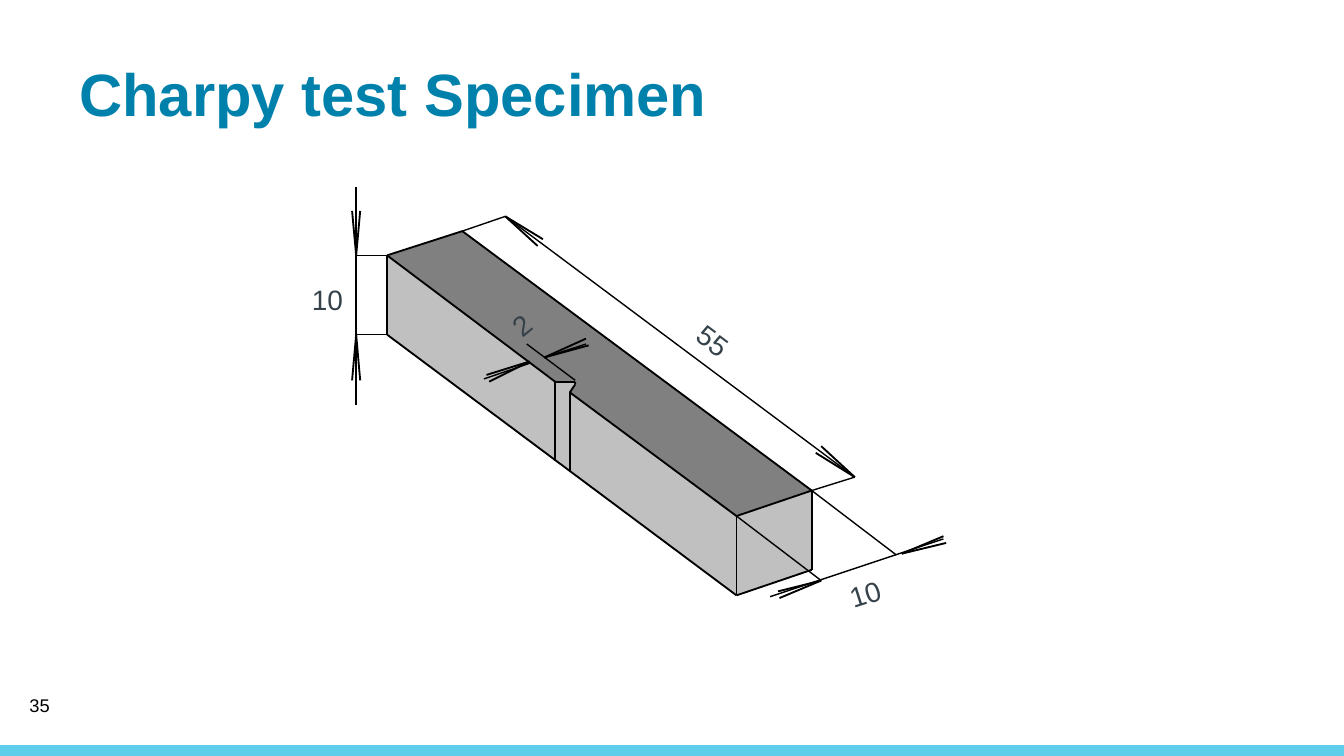
from pptx import Presentation
from pptx.dml.color import RGBColor
from pptx.enum.shapes import MSO_CONNECTOR, MSO_SHAPE
from pptx.enum.text import MSO_ANCHOR, PP_ALIGN
from pptx.oxml.ns import qn
from pptx.util import Inches, Pt
from lxml import etree

STRAIGHT = MSO_CONNECTOR.STRAIGHT
RECTANGLE = MSO_SHAPE.RECTANGLE
TOP, MIDDLE = MSO_ANCHOR.TOP, MSO_ANCHOR.MIDDLE
LEFT = PP_ALIGN.LEFT

BLACK = RGBColor(0x00, 0x00, 0x00)
TITLE_BLUE = RGBColor(0x00, 0x81, 0xAB)
BAR_BLUE = RGBColor(0x5F, 0xCE, 0xEA)
LABEL_GREY = RGBColor(0x36, 0x42, 0x4A)
TOP_GREY = RGBColor(0x80, 0x80, 0x80)
SIDE_GREY = RGBColor(0xC0, 0xC0, 0xC0)

# A 16:9 slide
deck = Presentation()
deck.slide_width = Inches(10)
deck.slide_height = deck.slide_width * 9 // 16
slide = deck.slides.add_slide(deck.slide_layouts[5])
shapes = slide.shapes


def add_line(start, end, width):
    ends = [Inches(value) for value in (*start, *end)]
    line = shapes.add_connector(STRAIGHT, *ends)
    line.line.color.rgb = BLACK
    line.line.width = Pt(width)
    etree.SubElement(line._element.spPr, qn("a:effectLst"))


def write_text(box, text, anchor, insets, font_values, color):
    frame = box.text_frame
    frame.vertical_anchor = anchor
    sides = ("margin_left", "margin_top", "margin_right", "margin_bottom")
    for side, inset in zip(sides, insets):
        setattr(frame, side, Inches(inset))
    para = frame.paragraphs[0]
    para.alignment = LEFT
    span = para.add_run()
    span.text = text
    span.font.color.rgb = color
    for name, value in font_values.items():
        setattr(span.font, name, value)


# Bottom bar
bar_height = Inches(0.08)
bar = shapes.add_shape(RECTANGLE, 0, deck.slide_height - bar_height,
                       deck.slide_width, bar_height)
bar.shadow.inherit = False
bar.fill.solid()
bar.fill.fore_color.rgb = BAR_BLUE
bar.line.fill.background()

# Title
title = shapes.title
title.left, title.top = Inches(0.59), Inches(0.37)
title.width, title.height = Inches(8.99), Inches(0.57)
title_font = {"name": "Arial", "size": Pt(32), "bold": True}
write_text(title, "Charpy test Specimen", TOP, (0, 0.05, 0.1, 0.05), title_font,
           TITLE_BLUE)

# Corners of the bar specimen
back_left, back_right = (2.88, 1.9), (3.44, 1.72)
front_left, front_right = (5.48, 3.84), (6.04, 3.65)
back_base, front_base, right_base = (2.88, 2.49), (5.48, 4.43), (6.04, 4.24)
notch_back, notch_front = (4.13, 2.84), (4.24, 2.92)
notch_back_base, notch_front_base = (4.13, 3.43), (4.24, 3.51)
notch_root = [(4.28, 2.86), (4.28, 2.85), (4.27, 2.84)]

# Filled faces, then the rounded notch root as an open curve
outlines = [
    ([notch_back, back_left, back_right, front_right, front_left, notch_front,
      *notch_root], TOP_GREY),
    ([front_base, front_left, front_right, right_base], SIDE_GREY),
    ([front_left, notch_front, notch_front_base, front_base], SIDE_GREY),
    ([notch_back_base, back_base, back_left, notch_back], SIDE_GREY),
    ([notch_back, notch_back_base, notch_front_base, notch_front, *notch_root],
     SIDE_GREY),
    (notch_root, None),
]
for points, fill in outlines:
    corners = [(Inches(x), Inches(y)) for x, y in points]
    builder = shapes.build_freeform(*corners[0])
    builder.add_line_segments(corners[1:], close=fill is not None)
    face = builder.convert_to_shape()
    face.shadow.inherit = False
    if fill is None:
        face.fill.background()
        face.line.color.rgb = BLACK
        face.line.width = Pt(1)
    else:
        face.fill.solid()
        face.fill.fore_color.rgb = fill
        face.line.fill.background()

# Specimen edges
edges = [
    (back_left, back_right), (back_right, front_right), (front_right, front_left),
    (front_left, notch_front), (notch_back, back_left), (back_left, back_base),
    (back_base, front_base), (front_base, front_left), (front_base, right_base),
    (right_base, front_right), (notch_root[-1], notch_back),
    (notch_root[0], notch_front), (notch_front, notch_front_base),
    (notch_back, notch_back_base),
]
for start, end in edges:
    add_line(start, end, 1)

# Dimension and extension lines
length_start, length_end = (3.76, 1.61), (6.36, 3.55)
height_top, height_base = (2.65, 1.9), (2.65, 2.49)
width_left, width_right = (6.11, 4.32), (6.71, 4.12)
notch_left, notch_right = (3.94, 2.69), (4.05, 2.66)
dimension_lines = [
    (back_right, length_start), (front_right, length_end),
    (length_start, length_end),
    (back_left, height_top), (back_base, height_base),
    (height_top, height_base), (height_base, (2.65, 3.01)),
    (height_top, (2.65, 1.39)),
    ((4.28, 2.83), (4.12, 2.71)), ((4.12, 2.71), (3.92, 2.56)),
    (notch_right, (4.36, 2.56)), ((3.95, 2.7), (3.6, 2.82)),
    (front_right, (6.67, 4.13)), (front_left, width_left),
    ((7.02, 4.01), (5.73, 4.44)),
]
for start, end in dimension_lines:
    add_line(start, end, 0.75)

# Open arrowheads: a tip with two barbs
arrowheads = [
    (length_start, (4.04, 1.78), (4, 1.83)),
    (length_end, (6.07, 3.37), (6.11, 3.32)),
    (height_base, (2.68, 2.83), (2.62, 2.83)),
    (height_top, (2.62, 1.57), (2.68, 1.57)),
    (notch_right, (4.36, 2.52), (4.38, 2.57)),
    (notch_left, (3.64, 2.84), (3.62, 2.79)),
    (width_right, (7.02, 3.99), (7.04, 4.04)),
    (width_left, (5.8, 4.45), (5.79, 4.4)),
]
for tip, *barbs in arrowheads:
    for barb in barbs:
        add_line(tip, barb, 1)

# Dimension labels
label_font = {"name": "Arial", "size": Pt(15)}
labels = [
    ("55", 5.12, 2.37, 0.38, 36.9),
    ("10", 6.25, 4.25, 0.38, 342.3),
    ("10", 2.25, 2.06, 0.38, 0),
    ("2", 3.75, 2.25, 0.27, 320.7),
]
for text, left, top, width, angle in labels:
    label = shapes.add_textbox(Inches(left), Inches(top), Inches(width), Inches(0.33))
    label.rotation = angle
    label.text_frame.word_wrap = False
    write_text(label, text, TOP, (0.07, 0.04, 0.07, 0.04), label_font, LABEL_GREY)

# Slide number
number = shapes.add_textbox(Inches(0.12), Inches(5.1), Inches(2.25), Inches(0.3))
number.text_frame.word_wrap = True
number_font = {"name": "Arial", "size": Pt(9.8)}
write_text(number, "35", MIDDLE, (0.1, 0.05, 0.1, 0.05), number_font, BLACK)

deck.save("out.pptx")
